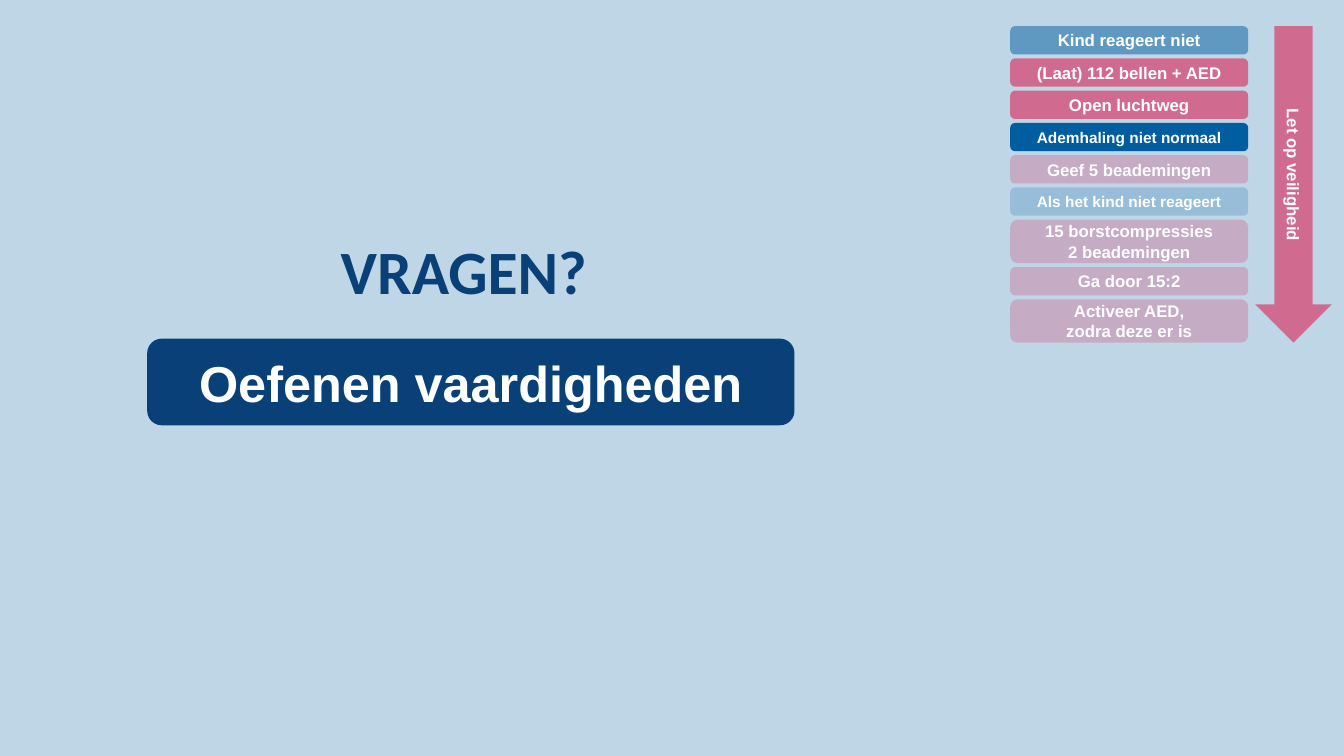
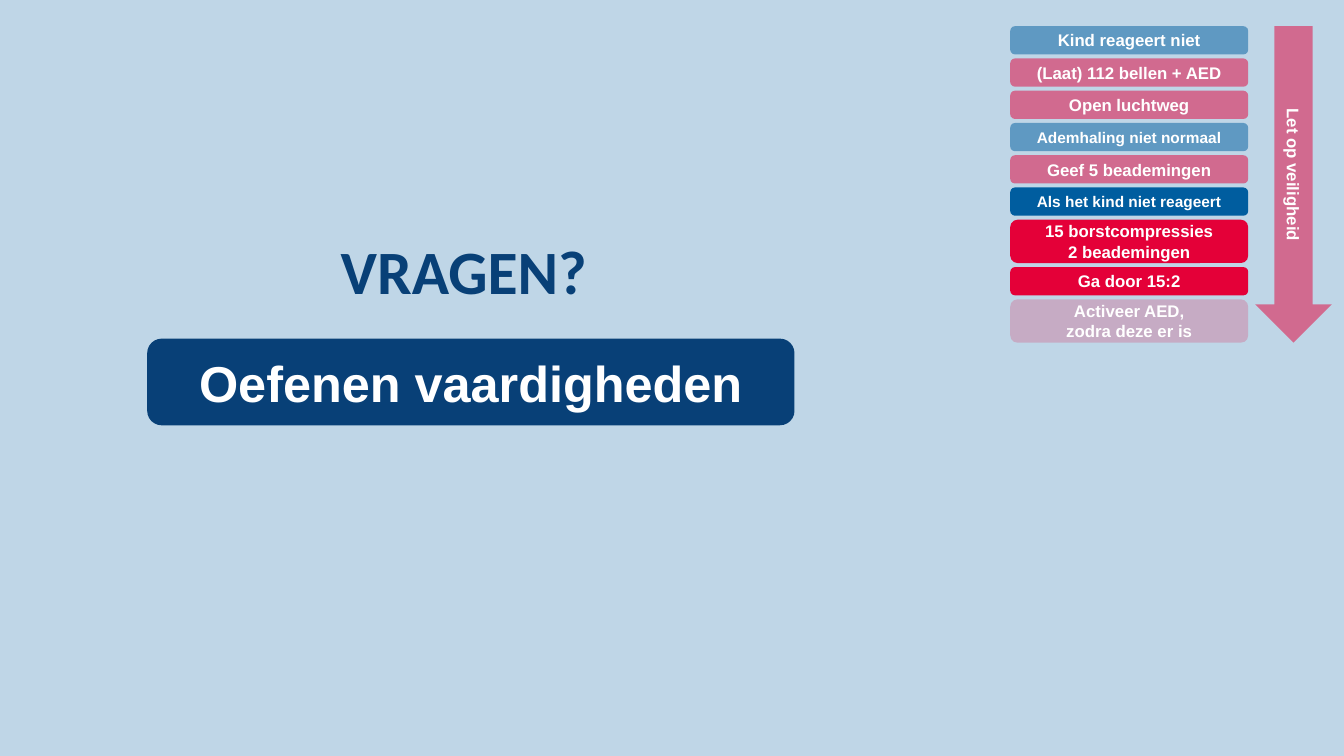
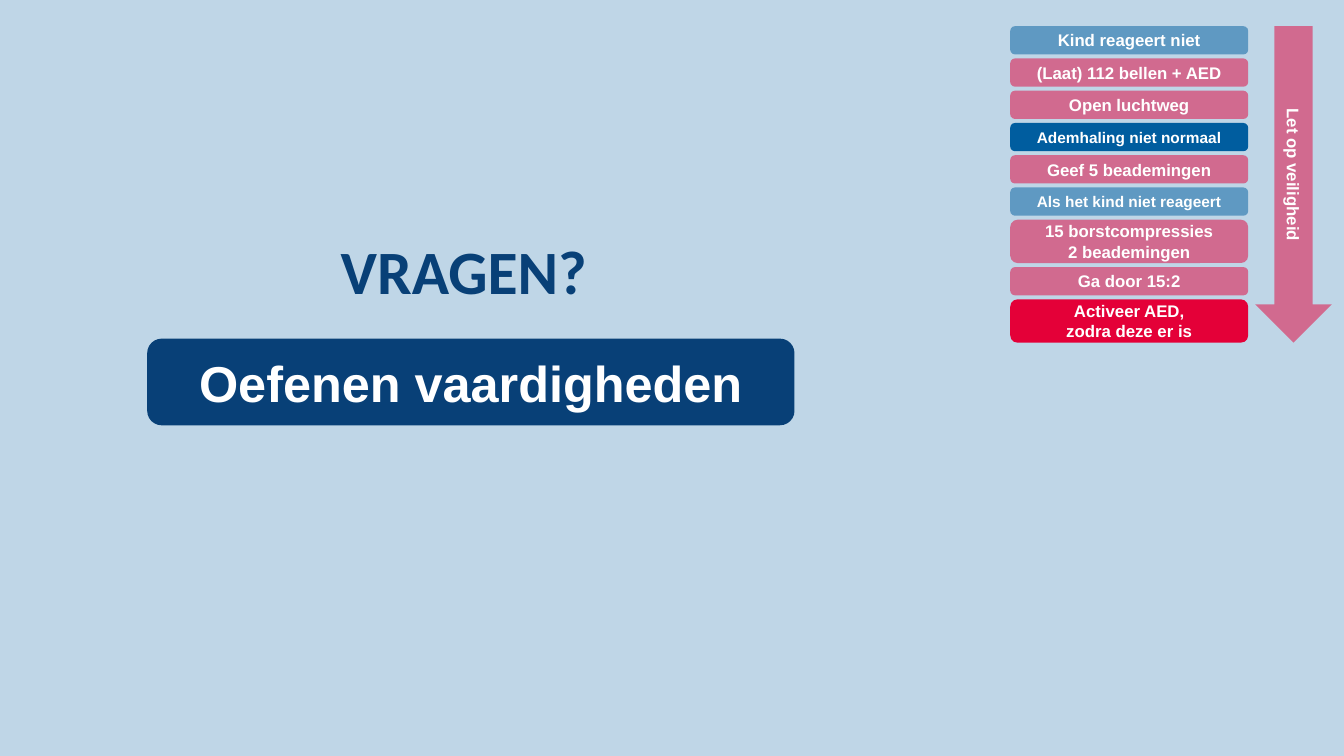
from lxml import etree
from pptx import Presentation
from pptx import util as u
from pptx.dml import color
from pptx.enum import shapes, text
from pptx.oxml import ns

NAVY, BLUE, RED, WHITE, BACKDROP = "084077", "005D9F", "E40038", "FFFFFF", "BFD6E7"
DONE, NOW, LATER = 50, 100, 20

STEPS = [
    ("Kind reageert niet", BLUE, 12),
    ("(Laat) 112 bellen + AED", RED, 12),
    ("Open luchtweg", RED, 12),
    ("Ademhaling niet normaal", BLUE, 11),
    ("Geef 5 beademingen", RED, 12),
    ("Als het kind niet reageert", BLUE, 11),
    ("15 borstcompressies\n2 beademingen", RED, 12),
    ("Ga door 15:2", RED, 12),
    ("Activeer AED,\nzodra deze er is", RED, 12),
]
PROGRESS = [
    [DONE] * 3 + [NOW] + [LATER] * 5,
    [DONE] * 5 + [NOW] * 3 + [LATER],
    [DONE] * 3 + [NOW] + [DONE] * 4 + [NOW],
]
STEP_LEFT, STEP_TOP, STEP_WIDTH, STEP_GAP = 10.02, 0.26, 2.36, 0.04
STEP_HEIGHTS = {1: 0.28, 2: 0.43}


def paint(fill, hex_color, opacity=100):
    fill.solid()
    fill.fore_color.rgb = color.RGBColor.from_string(hex_color)
    if opacity < 100:
        rgb = fill._xPr.find(".//" + ns.qn("a:srgbClr"))
        etree.SubElement(rgb, ns.qn("a:alpha"), val=str(opacity * 1000))


def add_block(group, preset, place, wording, hex_color, opacity, size):
    block = group.shapes.add_shape(preset, *map(u.Inches, place))
    block.shadow.inherit = False
    block.line.fill.background()
    paint(block.fill, hex_color, opacity)
    frame = block.text_frame
    frame.text = wording
    frame_format = {
        "word_wrap": True, "vertical_anchor": text.MSO_ANCHOR.MIDDLE,
        "margin_top": 0, "margin_bottom": 0,
    }
    for key, value in frame_format.items():
        setattr(frame, key, value)
    for paragraph in frame.paragraphs:
        paragraph.alignment = text.PP_ALIGN.CENTER
        for key, value in {"name": "Arial", "size": u.Pt(size), "bold": True}.items():
            setattr(paragraph.font, key, value)
        paint(paragraph.font.fill, WHITE)
    return block


prs = Presentation()
prs.slide_width, prs.slide_height = u.Inches(13.33), u.Inches(7.5)
paint(prs.slide_master.background.fill, BACKDROP)
ROUNDED = shapes.MSO_SHAPE.ROUNDED_RECTANGLE

for opacities in PROGRESS:
    slide = prs.slides.add_slide(prs.slide_layouts[6])

    practice = slide.shapes.add_group_shape()
    add_block(practice, ROUNDED, (1.46, 3.36, 6.42, 0.86),
              "Oefenen vaardigheden", NAVY, 100, 36)
    question = practice.shapes.add_textbox(*map(u.Inches, (0.55, 2.26, 8.24, 0.86)))
    question.text_frame.word_wrap = True
    heading = question.text_frame.paragraphs[0]
    heading.text = "VRAGEN? "
    heading.alignment = text.PP_ALIGN.CENTER
    for key, value in {"name": "Calibri", "size": u.Pt(44), "bold": True}.items():
        setattr(heading.font, key, value)
    paint(heading.font.fill, NAVY)

    protocol = slide.shapes.add_group_shape()
    top = STEP_TOP
    for (wording, hex_color, size), opacity in zip(STEPS, opacities):
        height = STEP_HEIGHTS[len(wording.splitlines())]
        add_block(protocol, ROUNDED, (STEP_LEFT, top, STEP_WIDTH, height),
                  wording, hex_color, opacity, size)
        top += height + STEP_GAP
    safety = add_block(protocol, shapes.MSO_SHAPE.DOWN_ARROW,
                       (12.45, STEP_TOP, 0.76, top - STEP_GAP - STEP_TOP),
                       "Let op veiligheid", RED, DONE, 12)
    safety.text_frame._txBody.bodyPr.set("vert", "vert")

prs.save("out.pptx")
